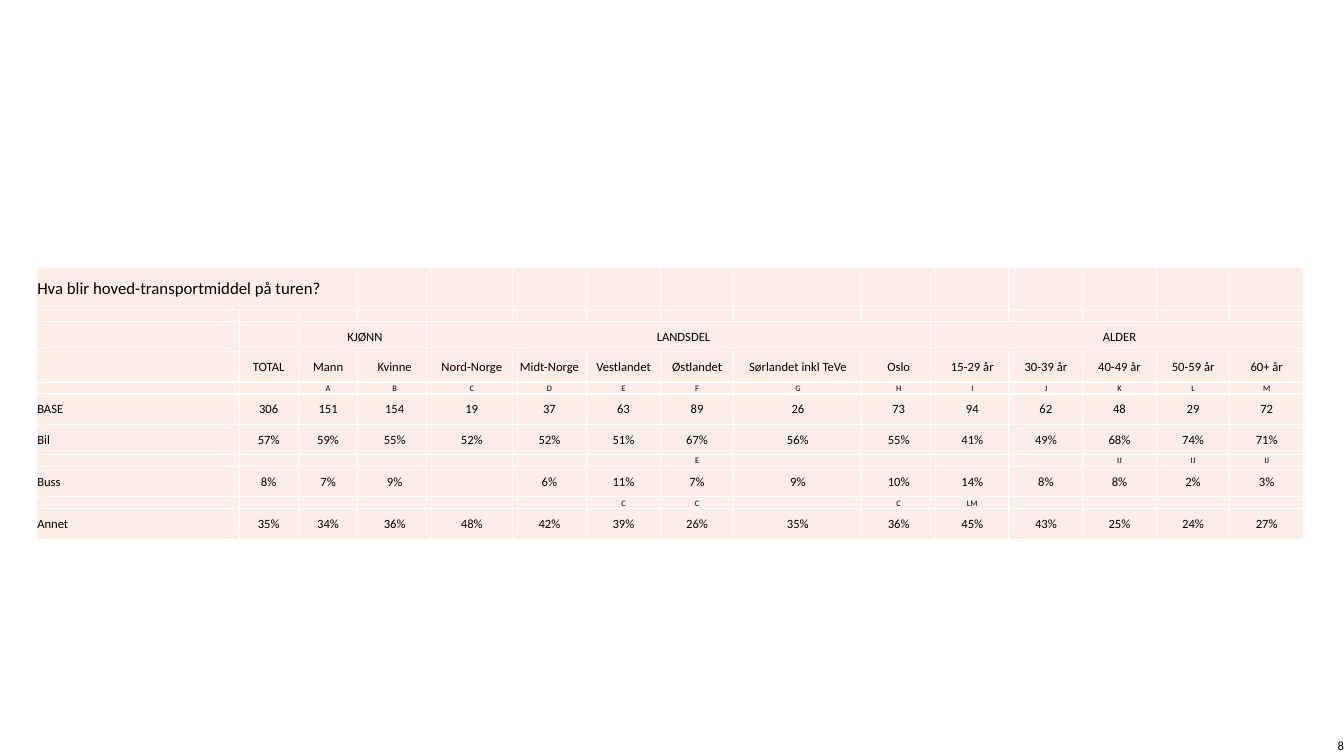
from lxml.etree import SubElement as Sub
from pptx import Presentation
from pptx.dml.color import RGBColor
from pptx.enum.text import MSO_ANCHOR as Anchor, PP_ALIGN as Align
from pptx.oxml.ns import qn
from pptx.util import Inches, Pt

FONT, INK, PEACH, WHITE = "Calibri", "000000", "FCEEE7", "FFFFFF"
TITLE, BODY, NOTE = 12, 9, 6

COLS = [2.01, 0.59, 0.59, 0.73, 0.8, 0.74, 0.73, 0.73, 1.27] + [0.73] * 6
HEIGHTS = {TITLE: 0.42, BODY: 0.3, NOTE: 0.12}

# Text size and cells of each row; rows in NOTE size hold significance letters
ROWS = [
    (TITLE, ["Hva blir hoved-transportmiddel på turen?"]),
    (NOTE, []),
    (BODY, "||KJØNN||LANDSDEL||||||ALDER".split("|")),
    (BODY, ("|TOTAL|Mann|Kvinne|Nord-Norge|Midt-Norge|Vestlandet|Østlandet|"
            "Sørlandet inkl TeVe|Oslo|15-29 år|30-39 år|40-49 år|50-59 år|"
            "60+ år").split("|")),
    (NOTE, ["", "", *"ABCDEFGHIJKLM"]),
    (BODY, "BASE|306|151|154|19|37|63|89|26|73|94|62|48|29|72".split("|")),
    (BODY, ("Bil|57%|59%|55%|52%|52%|51%|67%|56%|55%|41%|49%|68%|74%|"
            "71%").split("|")),
    (NOTE, "|||||||E|||||IJ|IJ|IJ".split("|")),
    (BODY, "Buss|8%|7%|9%||6%|11%|7%|9%|10%|14%|8%|8%|2%|3%".split("|")),
    (NOTE, "||||||C|C||C|LM".split("|")),
    (BODY, ("Annet|35%|34%|36%|48%|42%|39%|26%|35%|36%|45%|43%|25%|24%|"
            "27%").split("|")),
]
# Row, first column, last column
SPANS = [(0, 0, 2), (2, 2, 3), (2, 4, 9), (2, 10, 14)]


def rgb(code):
    return RGBColor.from_string(code)


def put(frame, text, size=BODY, color=INK, align=Align.LEFT):
    para = frame.paragraphs[0]
    para.alignment = align
    if not text:
        # Sizes the empty paragraph so that a low row stays low
        Sub(para._p, qn("a:endParaRPr"), sz=str(size * 100))
        return
    run = para.add_run()
    run.text = text
    run.font.name = FONT
    run.font.size = Pt(size)
    run.font.color.rgb = rgb(color)


def edge(cell, color=WHITE, width=1):
    """Draw all four borders of a cell."""
    props = cell._tc.get_or_add_tcPr()
    for side in ("lnL", "lnR", "lnT", "lnB"):
        line = Sub(props, qn(f"a:{side}"), w=str(Pt(width)))
        fill = Sub(line, qn("a:solidFill"))
        Sub(fill, qn("a:srgbClr"), val=color)


def style(cell):
    edge(cell)
    cell.fill.solid()
    cell.fill.fore_color.rgb = rgb(PEACH)
    cell.vertical_anchor = Anchor.MIDDLE
    cell.margin_left = cell.margin_right = cell.margin_top = Inches(0.01)
    cell.margin_bottom = 0


def add_grid(slide, left, top):
    high = sum(HEIGHTS[size] for size, _ in ROWS)
    frame = slide.shapes.add_table(len(ROWS), len(COLS), Inches(left),
                                   Inches(top), Inches(sum(COLS)),
                                   Inches(high))
    table = frame.table
    table.first_row = table.horz_banding = False
    for col, width in zip(table.columns, COLS):
        col.width = Inches(width)
    for r, (size, texts) in enumerate(ROWS):
        table.rows[r].height = Inches(HEIGHTS[size])
        for c in range(len(COLS)):
            cell = table.cell(r, c)
            style(cell)
            put(cell.text_frame, texts[c] if c < len(texts) else "", size,
                align=Align.CENTER if c else Align.LEFT)
    for r, first, last in SPANS:
        table.cell(r, first).merge(table.cell(r, last))


def add_number(slide, text):
    box = slide.shapes.add_textbox(Inches(12.95), Inches(7.29),
                                   Inches(0.38), Inches(0.21))
    frame = box.text_frame
    frame.word_wrap = True
    frame.vertical_anchor = Anchor.MIDDLE
    frame.margin_left = frame.margin_right = 0
    frame.margin_top = frame.margin_bottom = 0
    put(frame, text, align=Align.RIGHT)


def main():
    prs = Presentation()
    prs.slide_width, prs.slide_height = Inches(13.33), Inches(7.5)
    slide = prs.slides.add_slide(prs.slide_layouts[6])
    add_grid(slide, 0.36, 2.65)
    add_number(slide, "8")
    prs.save("out.pptx")


if __name__ == "__main__":
    main()
